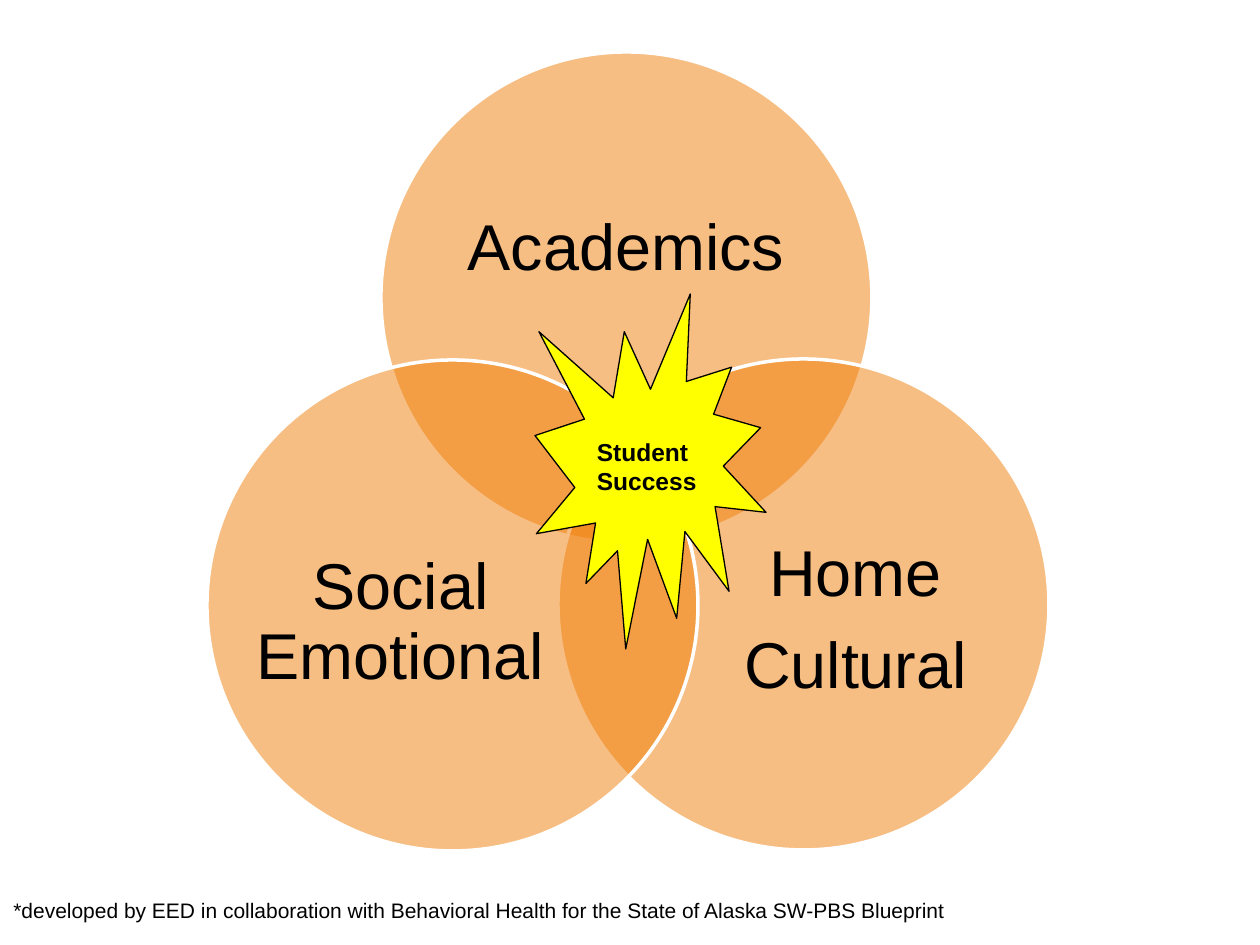
import pptx
import pptx.dml.color
import pptx.enum.shapes
import pptx.enum.text
import pptx.oxml.ns
import pptx.util
from lxml import etree

PX = 914400 / 126
COLORS = {"orange": "F07F09", "yellow": "FFFF00", "white": "FFFFFF", "black": "000000"}
SHAPES = pptx.enum.shapes.MSO_SHAPE
ANCHOR = pptx.enum.text.MSO_ANCHOR
ALIGN = pptx.enum.text.PP_ALIGN


def add_outlined(preset, box, fill, line, line_width):
    shape = slide.shapes.add_shape(preset, *[round(v * PX) for v in box])
    shape.shadow.inherit = False
    shape.fill.solid()
    shape.fill.fore_color.rgb = pptx.dml.color.RGBColor.from_string(COLORS[fill])
    shape.line.color.rgb = pptx.dml.color.RGBColor.from_string(COLORS[line])
    shape.line.width = pptx.util.Pt(line_width)
    return shape


def write_lines(frame, lines, size, align, bold=False):
    frame.word_wrap = True
    for i, line in enumerate(lines):
        paragraph = frame.paragraphs[0] if i == 0 else frame.add_paragraph()
        paragraph.alignment = align
        run = paragraph.add_run()
        run.text = line
        run.font.name = "Arial"
        run.font.size = pptx.util.Pt(size)
        run.font.bold = bold
        run.font.color.rgb = pptx.dml.color.RGBColor.from_string(COLORS["black"])


prs = pptx.Presentation()
prs.slide_width = pptx.util.Inches(10)
prs.slide_height = pptx.util.Inches(7.5)
slide = prs.slides.add_slide(prs.slide_layouts[6])

# Venn circles: position, label box, label lines
DIAMETER = 491
venn = [
    ((381, 52), (446, 139, 360, 221), ["Academics"]),
    ((558, 359), (708, 486, 295, 271), ["Home", "Cultural"]),
    ((207, 360), (253, 488, 295, 271), ["Social Emotional"]),
]
for corner, label_box, lines in venn:
    circle = add_outlined(SHAPES.OVAL, (*corner, DIAMETER, DIAMETER), "orange", "white", 2)
    fill_color = circle.fill._xPr.find(".//" + pptx.oxml.ns.qn("a:srgbClr"))
    etree.SubElement(fill_color, pptx.oxml.ns.qn("a:alpha"), val="50000")

    label = slide.shapes.add_textbox(*[round(v * PX) for v in label_box]).text_frame
    label.margin_left = label.margin_right = label.margin_top = label.margin_bottom = 0
    label.vertical_anchor = ANCHOR.MIDDLE
    write_lines(label, lines, 37, ALIGN.CENTER)
    for paragraph in label.paragraphs:
        paragraph.line_spacing = 0.9
        paragraph.space_after = pptx.util.Pt(13)

# Starburst at the centre
success = add_outlined(SHAPES.EXPLOSION1, (535, 294, 231, 355), "yellow", "black", 0.75).text_frame
success.vertical_anchor = ANCHOR.TOP
success.margin_top = round(39 * PX)
write_lines(success, ["Student", "Success"], 14, ALIGN.LEFT, bold=True)

# Credit line
credit = slide.shapes.add_textbox(*[round(v * PX) for v in (1, 891, 1257, 38)]).text_frame
write_lines(
    credit,
    ["*developed by EED in collaboration with Behavioral Health for the State of Alaska SW-PBS Blueprint"],
    12,
    ALIGN.LEFT,
)

prs.save("out.pptx")
